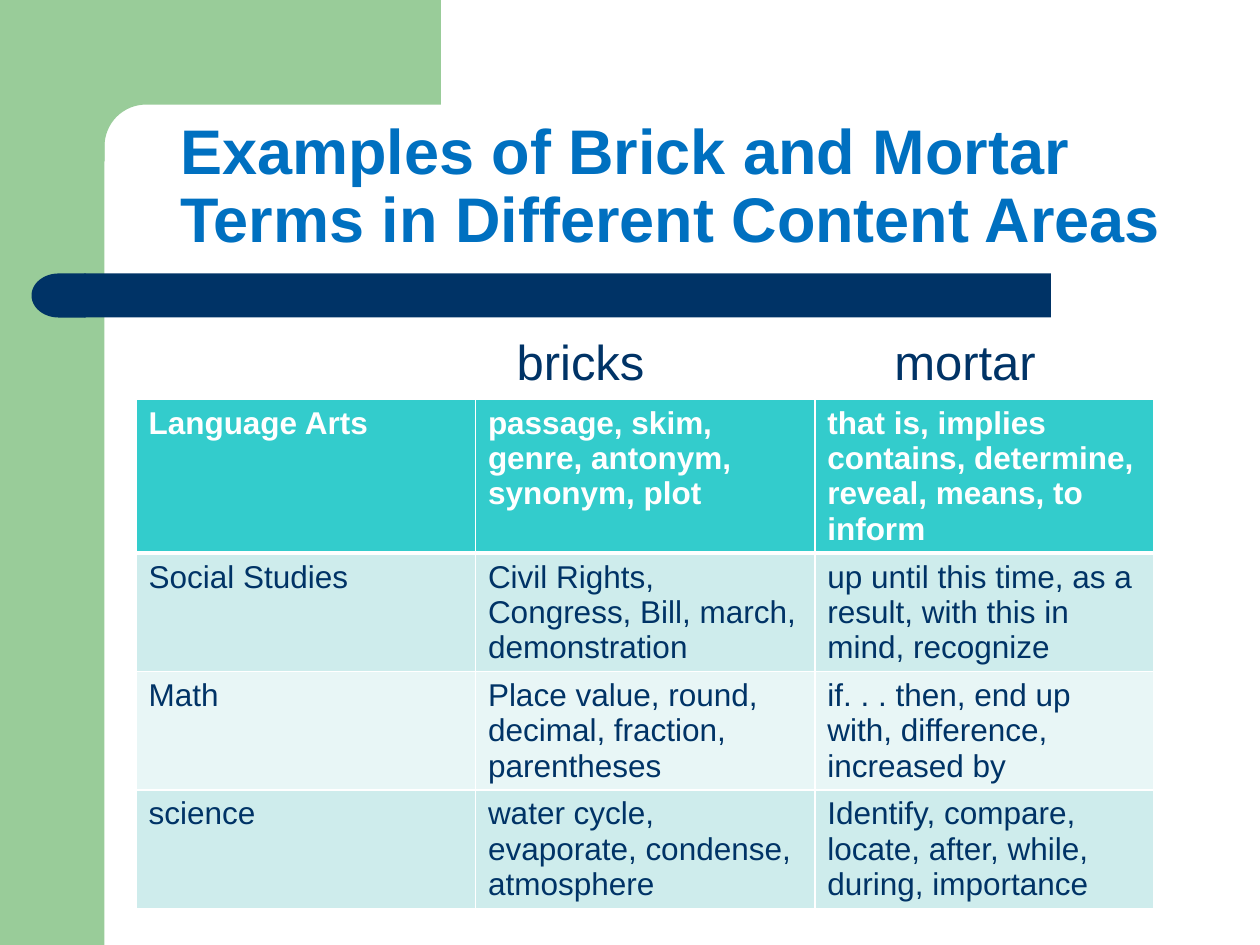
from math import cos, pi, sin

from lxml import etree
from pptx import Presentation
from pptx.dml.color import RGBColor
from pptx.enum import shapes, text
from pptx.oxml import ns
from pptx.util import Inches, Pt

GREEN = RGBColor(0x99, 0xCC, 0x99)
NAVY = RGBColor(0x00, 0x33, 0x66)
BLUE = RGBColor(0x00, 0x70, 0xC0)
WHITE = RGBColor(0xFF, 0xFF, 0xFF)
TEAL = RGBColor(0x33, 0xCC, 0xCC)
PALE = RGBColor(0xCE, 0xEC, 0xEC)
LIGHT = RGBColor(0xE8, 0xF6, 0xF6)

ROWS = [
    ("Language Arts",
     "passage, skim, genre, antonym, synonym, plot",
     "that is, implies contains, determine, reveal, means, to inform"),
    ("Social Studies",
     "Civil Rights, Congress, Bill, march, demonstration",
     "up until this time, as a result, with this in mind, recognize"),
    ("Math",
     "Place value, round, decimal, fraction, parentheses",
     "if. . . then, end up with, difference, increased by"),
    ("science",
     "water cycle, evaporate, condense, atmosphere",
     "Identify, compare, locate, after, while, during, importance"),
]


def paint(shape, color):
    shape.shadow.inherit = False
    shape.fill.solid()
    shape.fill.fore_color.rgb = color
    shape.line.fill.background()


def add_block(slide, kind, box, color):
    shape = slide.shapes.add_shape(kind, *map(Inches, box))
    paint(shape, color)
    return shape


def add_corner(slide):
    mid, rad, steps = 1.16, 0.33, 16
    turns = [pi / 2 * i / steps for i in range(steps + 1)]
    curve = [(mid - rad * sin(t), mid - rad * cos(t)) for t in turns]
    points = [(3.5, 0.83)] + curve + [(0.83, 1.28), (0.5, 1.28), (0.5, 0)]
    pen = slide.shapes.build_freeform(Inches(3.5), 0)
    pen.add_line_segments([(Inches(x), Inches(y)) for x, y in points])
    paint(pen.convert_to_shape(), GREEN)


def add_run(para, words, size, color, bold=False):
    run = para.add_run()
    run.text = words
    font = run.font
    font.name, font.size, font.bold = "Arial", Pt(size), bold
    font.color.rgb = color


def place(slide, holder, box):
    holder.left, holder.top, holder.width, holder.height = map(Inches, box)
    slide.shapes._spTree.append(holder._element)
    frame = holder.text_frame
    frame.word_wrap = True
    frame.auto_size = text.MSO_AUTO_SIZE.NONE
    return frame


def add_title(slide):
    frame = place(slide, slide.shapes.title, (1.33, 0.83, 8.67, 1.25))
    frame.vertical_anchor = text.MSO_ANCHOR.BOTTOM
    para = frame.paragraphs[0]
    para.alignment = text.PP_ALIGN.LEFT
    para.line_spacing = 0.9
    add_run(para, "Examples of Brick and Mortar Terms in Different Content Areas",
            36, BLUE, True)


def add_head(frame, words, margin):
    para = frame.paragraphs[0]
    para.space_before = Pt(5.6)
    props = para._p.get_or_add_pPr()
    props.set("marL", str(Inches(margin)))
    props.set("indent", "0")
    etree.SubElement(props, ns.qn("a:buNone"))
    add_run(para, words, 28, NAVY)


def add_heads(slide):
    body = place(slide, slide.placeholders[1], (0, 2.58, 8.67, 4.07))
    add_head(body, "bricks", 4)
    note = slide.shapes.add_textbox(0, 0, 0, 0)
    add_head(place(slide, note, (7, 2.58, 1.67, 0.59)), "mortar", 0)


def add_edges(cell, base):
    props = cell._tc.get_or_add_tcPr()
    widths = {"a:lnL": 1, "a:lnR": 1, "a:lnT": 1, "a:lnB": base}
    for spot, (tag, width) in enumerate(widths.items()):
        edge = etree.Element(ns.qn(tag), w=str(Pt(width)))
        fill = etree.SubElement(edge, ns.qn("a:solidFill"))
        etree.SubElement(fill, ns.qn("a:srgbClr"), val=str(WHITE))
        props.insert(spot, edge)


def add_terms(slide):
    frame = slide.shapes.add_table(len(ROWS), 3, Inches(1.08), Inches(3.17),
                                   Inches(8.08), Inches(4.03))
    table = frame.table
    for col in table.columns:
        col.width = Inches(8.08 / 3)
    fills = (TEAL, PALE, LIGHT, PALE)
    for i, (words, fill) in enumerate(zip(ROWS, fills)):
        head = i == 0
        table.rows[i].height = Inches(1.21 if head else 0.94)
        for j, term in enumerate(words):
            cell = table.cell(i, j)
            cell.fill.solid()
            cell.fill.fore_color.rgb = fill
            add_edges(cell, 3 if head else 1)
            add_run(cell.text_frame.paragraphs[0], term, 18,
                    WHITE if head else NAVY, head)


def main():
    deck = Presentation()
    deck.slide_width, deck.slide_height = Inches(10), Inches(7.5)
    slide = deck.slides.add_slide(deck.slide_layouts[1])
    kinds = shapes.MSO_SHAPE
    add_block(slide, kinds.RECTANGLE, (0, 0, 0.83, 7.5), GREEN)
    add_corner(slide)
    add_block(slide, kinds.RECTANGLE, (0.67, 2.17, 7.67, 0.35), NAVY)
    cap = add_block(slide, kinds.FLOWCHART_DELAY, (0.25, 2.17, 0.43, 0.35), NAVY)
    cap.rotation = 180
    add_title(slide)
    add_heads(slide)
    add_terms(slide)
    deck.save("out.pptx")


if __name__ == "__main__":
    main()
